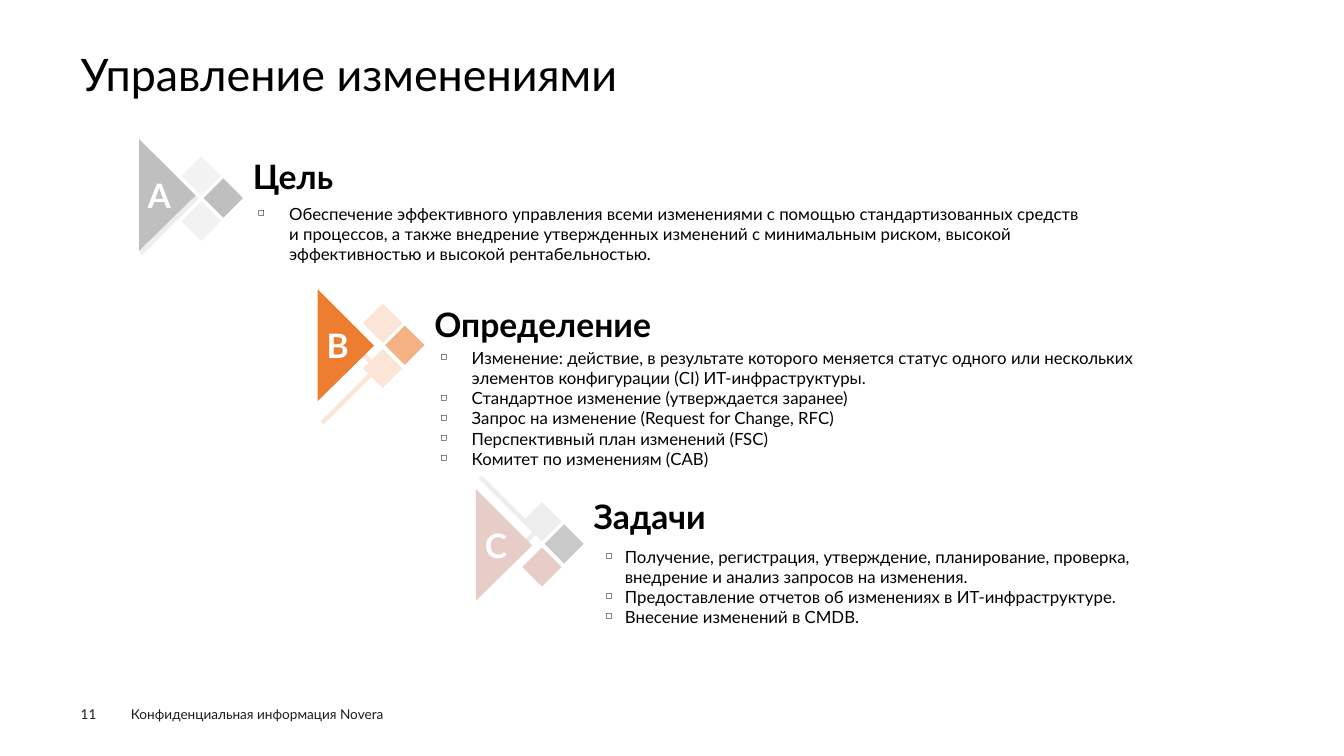
"""Build the change management slide: goal, definition and tasks."""
from lxml.etree import SubElement
from pptx import Presentation
from pptx.dml.color import RGBColor
from pptx.enum.shapes import MSO_SHAPE
from pptx.enum.text import MSO_ANCHOR as ANCHOR, PP_ALIGN as ALIGN
from pptx.oxml.ns import qn
from pptx.util import Inches, Pt


def paint(fill, color):
    """Give a shape or font fill a solid colour."""
    fill.solid()
    fill.fore_color.rgb = RGBColor.from_string(color)


def write(frame, lines, size, color="000000", bold=False, indent=None, **layout):
    """Write lines as paragraphs, bulleted when an indent is given."""
    for name, value in {"word_wrap": True, **layout}.items():
        setattr(frame, name, value)
    for number, line in enumerate(lines):
        paragraph = frame.add_paragraph() if number else frame.paragraphs[0]
        if indent:
            left, hanging = indent
            props = paragraph._p.get_or_add_pPr()
            props.set("marL", str(Inches(left)))
            props.set("indent", str(-Inches(hanging)))
            SubElement(props, qn("a:buSzPct"), val="50000")
            SubElement(props, qn("a:buChar"), char="◻")
        run = paragraph.add_run()
        run.text = line
        for name, value in {"name": "Lato", "size": Pt(size), "bold": bold}.items():
            setattr(run.font, name, value)
        paint(run.font.fill, color)


prs = Presentation()
prs.slide_width, prs.slide_height = Inches(13.33), Inches(7.5)
slide = prs.slides.add_slide(prs.slide_layouts[6])

no_margins = dict.fromkeys(
    ["margin_left", "margin_top", "margin_right", "margin_bottom"], 0)

page_number = slide.shapes.add_textbox(Inches(0.8), Inches(7), Inches(0.55), Inches(0.16))
write(page_number.text_frame, ["11"], 9.7, "1D1D1B", **no_margins)

confidentiality = slide.shapes.add_textbox(
    Inches(1.2), Inches(6.95), Inches(3.59), Inches(0.26))
write(confidentiality.text_frame, ["Конфиденциальная информация Novera"], 9.7, "1D1D1B")

title = slide.shapes.add_textbox(Inches(0.8), Inches(0.49), Inches(11.73), Inches(0.54))
write(title.text_frame, ["Управление изменениями"], 32,
      vertical_anchor=ANCHOR.MIDDLE, **no_margins)
title.text_frame.paragraphs[0].line_spacing = 0.9

sections = [
    {"letter": "A", "heading": "Цель", "heading_top": 1.41,
     "triangle": (1.38, 1.38), "chevron": (1.38, 1.41), "diamonds": (1.8, 1.55),
     "triangle_color": "BFBFBF", "chevron_color": "EDEDED",
     "diamond_colors": ["F2F2F2", "F2F2F2", "BFBFBF"],
     "body": (1.96, 1.97, 8.9, 0.66), "indent": (0.81, 0.31),
     "lines": ["Обеспечение эффективного управления всеми изменениями с помощью "
               "стандартизованных средств и процессов, а также внедрение утвержденных "
               "изменений с минимальным риском, высокой эффективностью и высокой "
               "рентабельностью."]},
    {"letter": "C", "heading": "Задачи", "heading_top": 4.78,
     "triangle": (4.72, 4.85), "chevron": (4.75, 4.72), "diamonds": (5.18, 4.98),
     "triangle_color": "E7CCC7", "chevron_color": "EDEDED",
     "diamond_colors": ["EDEDED", "E7CCC7", "C9C9C9"],
     "body": (5.91, 5.37, 6.1, 1.15), "indent": (0.19, 0.19),
     "lines": ["Получение, регистрация, утверждение, планирование, проверка, "
               "внедрение и анализ запросов на изменения.",
               "Предоставление отчетов об изменениях в ИТ-инфраструктуре.",
               "Внесение изменений в CMDB."]},
    {"letter": "B", "heading": "Определение", "heading_top": 2.87,
     "triangle": (3.15, 2.87), "chevron": (3.18, 3.09), "diamonds": (3.6, 3.01),
     "triangle_color": "ED7D31", "chevron_color": "FBE5D6",
     "diamond_colors": ["FBE5D6", "FBE5D6", "F4B183"],
     "body": (4.27, 3.4, 7.29, 1.49), "indent": (0.31, 0.31),
     "lines": ["Изменение: действие, в результате которого меняется статус одного или "
               "нескольких элементов конфигурации (CI) ИТ-инфраструктуры.",
               "Стандартное изменение (утверждается заранее)",
               "Запрос на изменение (Request for Change, RFC)",
               "Перспективный план изменений (FSC)",
               "Комитет по изменениям (CAB)"]},
]
diamond_offsets = [(0, 0), (0, 0.45), (0.22, 0.22)]
outlines = {
    "chevron": [(0.03, 0), (0.59, 0.56), (0.03, 1.12), (0, 1.09), (0.53, 0.56), (0, 0.03)],
    "triangle": [(0, 0), (0.56, 0.56), (0, 1.11)],
}

for section in sections:
    group = slide.shapes.add_group_shape().shapes
    x, y = section["diamonds"]
    marks = []
    for (dx, dy), color in zip(diamond_offsets, section["diamond_colors"]):
        diamond = group.add_shape(MSO_SHAPE.DIAMOND, Inches(x + dx), Inches(y + dy),
                                  Inches(0.39), Inches(0.39))
        marks.append((diamond, color))

    for part, offsets in outlines.items():
        left, top = section[part]
        points = [(Inches(left + dx), Inches(top + dy)) for dx, dy in offsets]
        builder = group.build_freeform(*points[0])
        builder.add_line_segments(points[1:])
        outline = builder.convert_to_shape()
        marks.append((outline, section[f"{part}_color"]))

    for mark, color in marks:
        paint(mark.fill, color)
        mark.line.fill.background()
        mark.shadow.inherit = False

    letter = outline.text_frame
    write(letter, [section["letter"]], 24, "FFFFFF", True, vertical_anchor=ANCHOR.MIDDLE,
          **{**no_margins, "margin_right": Inches(0.16)})
    letter.paragraphs[0].alignment = ALIGN.CENTER

    body = group.add_textbox(*map(Inches, section["body"]))
    write(body.text_frame, section["lines"], 12, indent=section["indent"])

    heading = group.add_textbox(Inches(x + 0.61), Inches(section["heading_top"]),
                                Inches(3.83), Inches(0.59))
    write(heading.text_frame, [section["heading"]], 24, bold=True,
          vertical_anchor=ANCHOR.BOTTOM)

prs.save("out.pptx")
